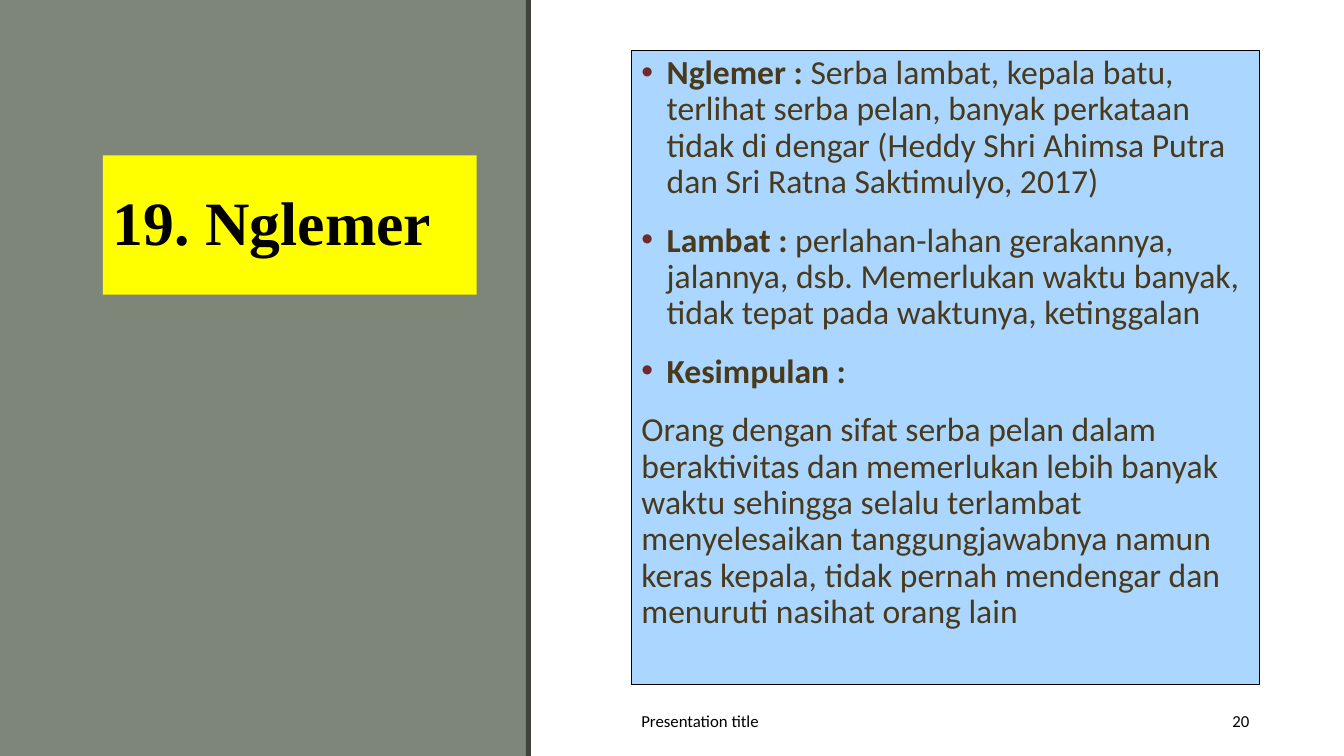
from lxml.etree import SubElement
from pptx import Presentation
from pptx.dml.color import RGBColor
from pptx.enum.shapes import MSO_SHAPE as Shape
from pptx.enum.text import MSO_ANCHOR as Anchor, MSO_AUTO_SIZE as Fit, PP_ALIGN as Align
from pptx.oxml.ns import qn
from pptx.util import Pt

WIDE, HIGH = 960, 540
BROWN = "4A3A1C"
POINTS = [
    ("Nglemer : ", "Serba lambat, kepala batu, terlihat serba pelan, banyak perkataan "
     "tidak di dengar (Heddy Shri Ahimsa Putra dan Sri Ratna Saktimulyo, 2017)"),
    ("Lambat : ", "perlahan-lahan gerakannya, jalannya, dsb. Memerlukan waktu banyak, "
     "tidak tepat pada waktunya, ketinggalan"),
    ("Kesimpulan :", ""),
    ("", "Orang dengan sifat serba pelan dalam beraktivitas dan memerlukan lebih banyak "
     "waktu sehingga selalu terlambat menyelesaikan tanggungjawabnya namun keras kepala, "
     "tidak pernah mendengar dan menuruti nasihat orang lain"),
]


def paint(part, color):
    """Give a fill or a font one solid colour."""
    if hasattr(part, "solid"):
        part.solid()
        part = part.fore_color
    else:
        part = part.color
    part.rgb = RGBColor.from_string(color)


def write(para, text, size=24, face="Calibri", color=BROWN, bold=False):
    run = para.add_run()
    run.text = text
    font = run.font
    font.size, font.name, font.bold = Pt(size), face, bold
    paint(font, color)


def place(shape, box):
    shape.left, shape.top, shape.width, shape.height = map(Pt, box)


def frame(shape, anchor):
    text = shape.text_frame
    text.word_wrap = True
    text.auto_size = Fit.NONE
    text.vertical_anchor = anchor
    return text


def mark(para, sign):
    """Set a hanging bullet, or none when sign is empty."""
    props = para._p.get_or_add_pPr()
    inset = Pt(18) if sign else 0
    props.set("marL", str(inset))
    props.set("indent", str(-inset))
    if sign:
        tint = SubElement(props, qn("a:buClr"))
        SubElement(tint, qn("a:srgbClr"), val="72292A")
        SubElement(props, qn("a:buFont"), typeface="Arial")
        SubElement(props, qn("a:buChar"), char=sign)
    else:
        SubElement(props, qn("a:buNone"))


def draw_side(slide, box, edge=3.6):
    """Draw the grey panel with a dark strip centred on its right side."""
    left, top, width, height = box
    strip = (left + width - edge / 2, top, edge, height)
    for area, color in ((box, "7E8679"), (strip, "3F433C")):
        rect = slide.shapes.add_shape(Shape.RECTANGLE, *map(Pt, area))
        rect.shadow.inherit = False
        paint(rect.fill, color)
        rect.line.fill.background()


def draw_title(slide, box):
    title = slide.shapes.title
    place(title, box)
    paint(title.fill, "FFFF00")
    para = frame(title, Anchor.MIDDLE).paragraphs[0]
    para.alignment = Align.LEFT
    para.line_spacing = 0.9
    write(para, "19. Nglemer", size=44, face="Times New Roman", color="000000", bold=True)


def draw_body(slide, box):
    body = slide.placeholders[1]
    place(body, box)
    paint(body.fill, "AAD6FF")
    paint(body.line.fill, "000000")
    body.line.width = Pt(1)
    text = frame(body, Anchor.TOP)
    for i, (term, note) in enumerate(POINTS):
        para = text.add_paragraph() if i else text.paragraphs[0]
        para.line_spacing = 0.9
        para.space_before = Pt(10 if i else 0)
        para.space_after = Pt(6)
        mark(para, "•" if term else "")
        if term:
            write(para, term, bold=True)
        if note:
            write(para, note)


def draw_foot(slide, box):
    """Put the footer text at the left of the box and the number at its right."""
    left, top, width, height = box
    wide, slim = 324, 62
    for text, x, span, side in (("Presentation title", left, wide, Align.LEFT),
                                ("20", left + width - slim, slim, Align.RIGHT)):
        label = slide.shapes.add_textbox(*map(Pt, (x, top, span, height)))
        para = frame(label, Anchor.MIDDLE).paragraphs[0]
        para.alignment = side
        write(para, text, size=12, color="000000")


def main():
    deck = Presentation()
    deck.slide_width, deck.slide_height = Pt(WIDE), Pt(HIGH)
    slide = deck.slides.add_slide(deck.slide_layouts[1])
    paint(slide.background.fill, "FFFFFF")
    draw_side(slide, (0, 0, 377.5, HIGH))
    tree = slide.shapes._spTree
    for holder in (slide.shapes.title, slide.placeholders[1]):
        tree.append(holder._element)  # bring in front of the panel
    draw_title(slide, (73.5, 111, 267, 99.5))
    draw_body(slide, (451, 36, 448.5, 453))
    draw_foot(slide, (451, 500.5, 448.5, 29))
    deck.save("out.pptx")


if __name__ == "__main__":
    main()
